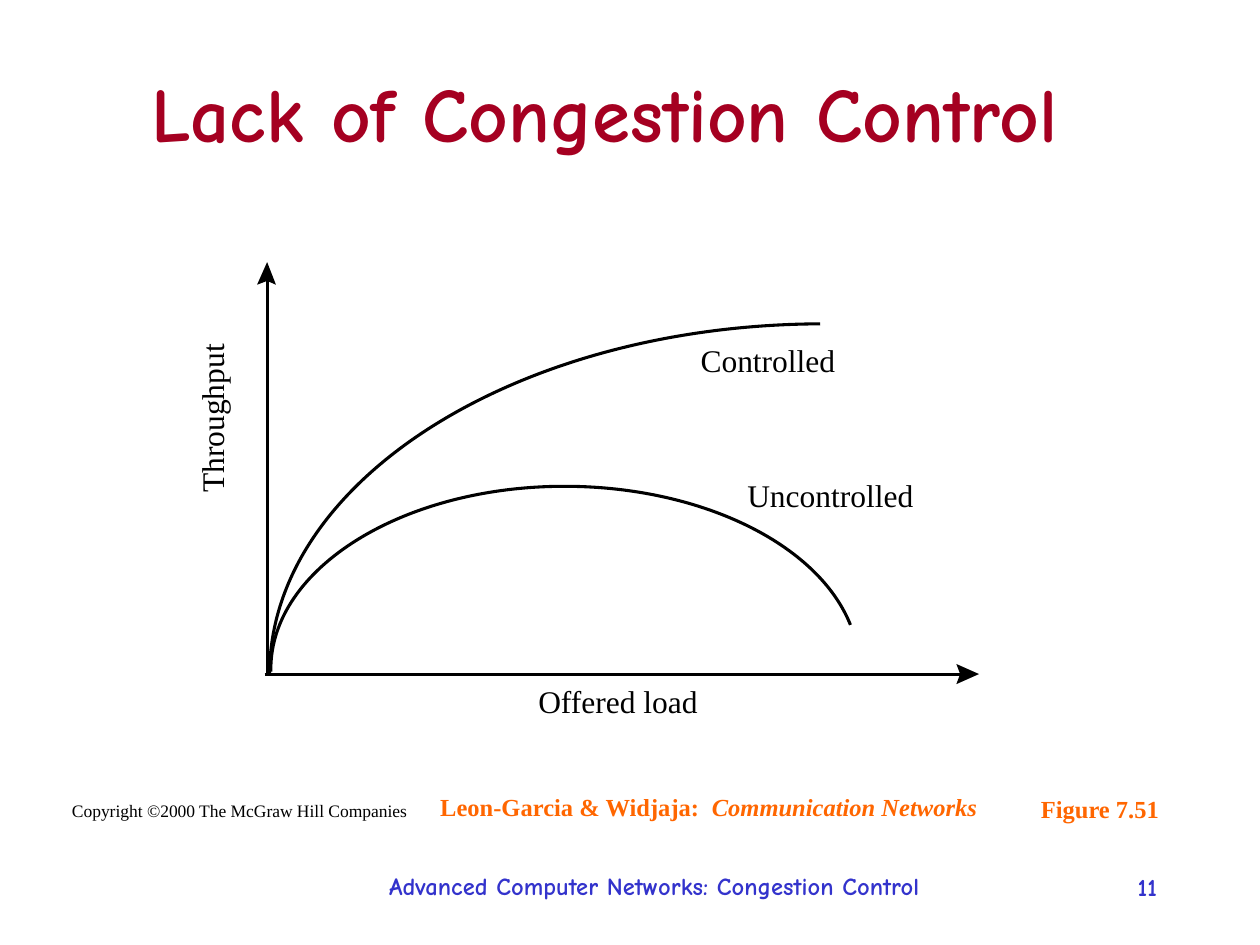
"""Build a slide that plots throughput against offered load."""
from lxml import etree
from pptx import Presentation
from pptx.dml.color import RGBColor
from pptx.enum.shapes import MSO_CONNECTOR
from pptx.enum.text import MSO_ANCHOR, MSO_AUTO_SIZE, PP_ALIGN
from pptx.oxml.ns import qn
from pptx.util import Inches, Pt

LINE = MSO_CONNECTOR.STRAIGHT
TOP, MID = MSO_ANCHOR.TOP, MSO_ANCHOR.MIDDLE
MIDDLE, RIGHT = PP_ALIGN.CENTER, PP_ALIGN.RIGHT
GROW = MSO_AUTO_SIZE.SHAPE_TO_FIT_TEXT
BLACK = RGBColor(0x00, 0x00, 0x00)
RED = RGBColor(0xA5, 0x00, 0x21)
BLUE = RGBColor(0x33, 0x33, 0xCC)
ORANGE = RGBColor(0xFF, 0x66, 0x00)
COMIC, TIMES = "Comic Neue", "Times New Roman"

STYLES = {
    "title": {"name": COMIC, "size": Pt(44), "bold": True, "color": RED},
    "foot": {"name": COMIC, "size": Pt(14), "bold": True, "color": BLUE},
    "label": {"name": TIMES, "size": Pt(18), "color": BLACK},
    "credit": {"name": TIMES, "size": Pt(14), "bold": True, "color": ORANGE},
    "rights": {"name": TIMES, "size": Pt(10), "color": BLACK},
}
FRAMES = {
    "title": {"vertical_anchor": MID, "word_wrap": True},
    "foot": {"vertical_anchor": TOP, "word_wrap": True},
    "label": {"vertical_anchor": TOP, "word_wrap": False, "auto_size": GROW,
              "margin_left": 0, "margin_right": 0,
              "margin_top": 0, "margin_bottom": 0},
    "credit": {"vertical_anchor": MID, "word_wrap": True, "auto_size": GROW},
    "rights": {"vertical_anchor": MID, "word_wrap": False, "auto_size": GROW},
}
TEXTS = [
    ("title", (0.35, 0.28, 8.9, 1.22), ["Lack of Congestion Control"], MIDDLE, 0),
    ("label", (4.27, 5.41, 1.27, 0.3), ["Offered load"], MIDDLE, 0),
    ("label", (1.08, 3.17, 1.2, 0.3), ["Throughput"], MIDDLE, 270),
    ("label", (5.56, 2.71, 1.07, 0.3), ["Controlled"], MIDDLE, 0),
    ("label", (5.93, 3.78, 1.32, 0.3), ["Uncontrolled"], MIDDLE, 0),
    ("rights", (0.46, 6.3, 2.88, 0.27),
     ["Copyright ©2000 The McGraw Hill Companies"], MIDDLE, 0),
    ("credit", (3.28, 6.23, 4.69, 0.34),
     ["Leon-Garcia & Widjaja:  ", "Communication Networks"], MIDDLE, 0),
    ("credit", (8.12, 6.25, 1.22, 0.34), ["Figure 7.51"], MIDDLE, 0),
    ("foot", (2.48, 6.86, 5.43, 0.35),
     ["Advanced Computer Networks: Congestion Control"], MIDDLE, 0),
    ("foot", (7.36, 6.87, 1.92, 0.5), ["11"], RIGHT, 0),
]
CURVES = [
    ((2.15, 5.33), [((2.15, 5.32), (2.15, 5.32), (2.15, 5.31)),
                    ((2.15, 4.51), (3.2, 3.86), (4.48, 3.86)),
                    ((5.55, 3.86), (6.49, 4.31), (6.75, 4.96))]),
    ((2.14, 5.35), [((2.14, 3.82), (4.1, 2.58), (6.51, 2.57))]),
]
AXES = [((2.1, 5.35), (7.65, 5.35)), ((2.12, 5.34), (2.12, 2.21))]
HEADS = [
    [(7.59, 5.43), (7.62, 5.35), (7.59, 5.27), (7.77, 5.35)],
    [(2.19, 2.26), (2.12, 2.23), (2.04, 2.26), (2.12, 2.08)],
]


def trace(slide, points, close):
    """Draw a freeform through the points."""
    spots = [(Inches(x), Inches(y)) for x, y in points]
    pen = slide.shapes.build_freeform(*spots[0])
    pen.add_line_segments(spots[1:], close=close)
    shape = pen.convert_to_shape()
    shape.shadow.inherit = False
    return shape


def bend(shape, parts):
    """Turn the straight parts of a freeform into cubic curves."""
    sides = list(shape._element.iter(qn("a:lnTo")))
    for side, knots in zip(sides, parts):
        side.tag = qn("a:cubicBezTo")
        side.clear()
        for x, y in knots:
            etree.SubElement(side, qn("a:pt"), x=str(Inches(x) - shape.left),
                             y=str(Inches(y) - shape.top))


def ink(line):
    """Give a line the plot's stroke."""
    line.color.rgb = BLACK
    line.width = Pt(1.75)


def write(slide, style, place, words, align, turn):
    """Add a text box in a named style."""
    box = slide.shapes.add_textbox(*map(Inches, place))
    box.rotation = turn
    frame = box.text_frame
    for key, value in FRAMES[style].items():
        setattr(frame, key, value)
    para = frame.paragraphs[0]
    para.alignment = align
    for i, word in enumerate(words):
        run = para.add_run()
        run.text = word
        for key, value in STYLES[style].items():
            if key == "color":
                run.font.color.rgb = value
            else:
                setattr(run.font, key, value)
        if i:
            run.font.italic = True


def main():
    """Build and save the slide."""
    deck = Presentation()
    deck.slide_width, deck.slide_height = Inches(10), Inches(7.5)
    slide = deck.slides.add_slide(deck.slide_layouts[6])
    for start, parts in CURVES:
        shape = trace(slide, [start] + [knots[-1] for knots in parts], False)
        bend(shape, parts)
        shape.fill.background()
        ink(shape.line)
    for start, end in AXES:
        axis = slide.shapes.add_connector(LINE, *map(Inches, start + end))
        ink(axis.line)
        etree.SubElement(axis._element.spPr, qn("a:effectLst"))
    for points in HEADS:
        head = trace(slide, points, True)
        head.fill.solid()
        head.fill.fore_color.rgb = BLACK
        head.line.fill.background()
    for text in TEXTS:
        write(slide, *text)
    deck.save("out.pptx")


if __name__ == "__main__":
    main()
